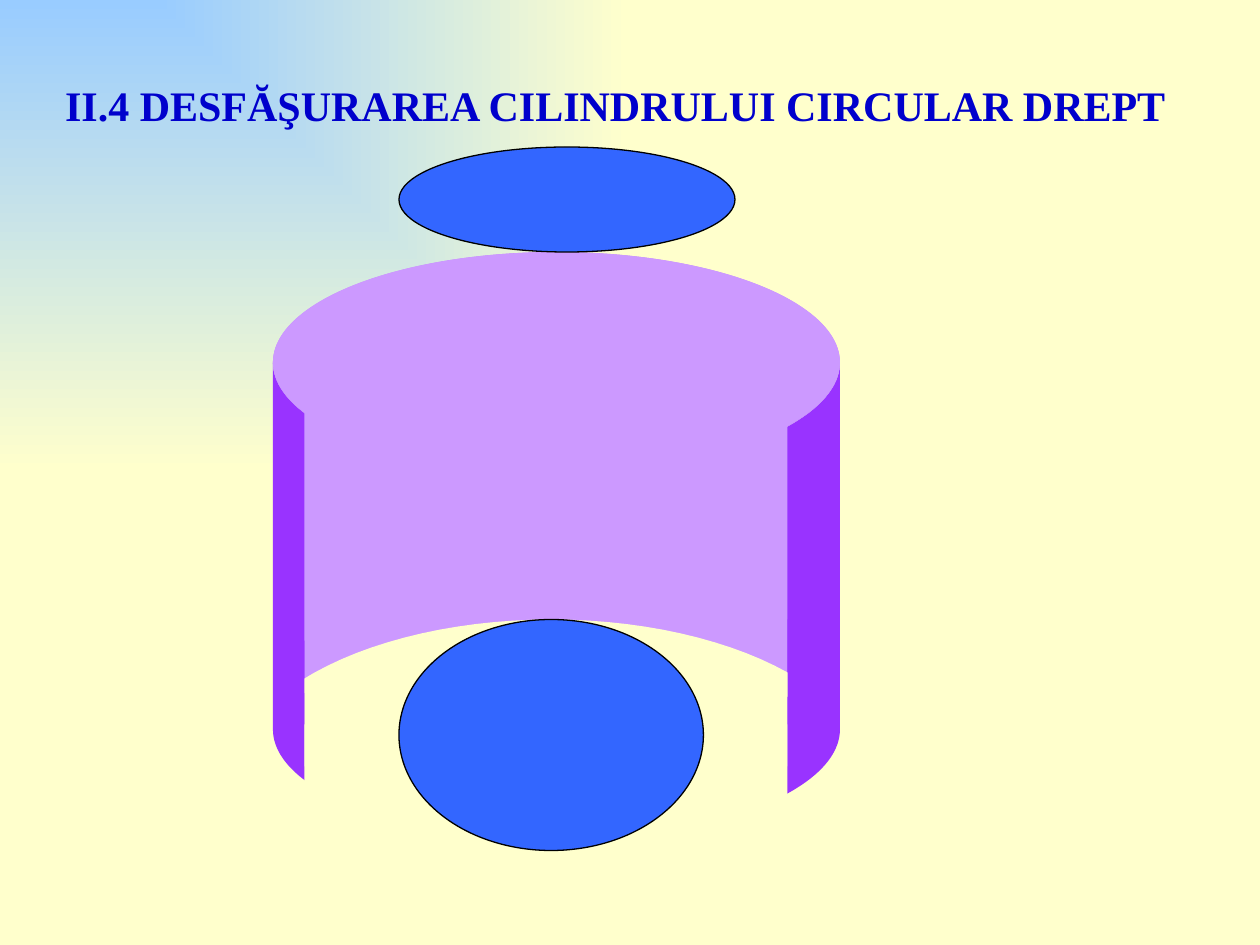
from dataclasses import dataclass
from math import atan2, cos, pi, radians, sin, tan

from lxml import etree
from pptx import Presentation
from pptx.dml.color import RGBColor
from pptx.enum.shapes import MSO_SHAPE
from pptx.enum.text import MSO_ANCHOR, MSO_AUTO_SIZE, PP_ALIGN
from pptx.oxml.ns import qn
from pptx.util import Pt

CAN, OVAL, RECT = MSO_SHAPE.CAN, MSO_SHAPE.OVAL, MSO_SHAPE.RECTANGLE
LEFT, TOP, FIXED = PP_ALIGN.LEFT, MSO_ANCHOR.TOP, MSO_AUTO_SIZE.NONE


@dataclass(frozen=True)
class Theme:
    sky: str = "99CCFF"
    cream: str = "FFFFCC"
    wall: str = "9933FF"
    inner: str = "CC99FF"
    base: str = "3366FF"
    edge: str = "000000"
    title: str = "0000CC"
    font: str = "Times New Roman"
    size: float = 24
    line: float = 0.75


THEME = Theme()


def rgb(code):
    return RGBColor.from_string(code)


def paint(shape, color, edge=None):
    shape.shadow.inherit = False
    shape.fill.solid()
    shape.fill.fore_color.rgb = rgb(color)
    if edge:
        shape.line.color.rgb = rgb(edge)
        shape.line.width = Pt(THEME.line)
    else:
        shape.line.fill.background()
    return shape


def add_part(slide, box, kind, place, color, edge=None):
    """Add a preset shape; place is relative to the box."""
    x, y, w, h = place
    shape = slide.shapes.add_shape(
        kind, Pt(box[0] + x), Pt(box[1] + y), Pt(w), Pt(h))
    return paint(shape, color, edge)


def add_poly(slide, box, points, color):
    """Add a closed outline; points are relative to the box."""
    spots = [(Pt(box[0] + x), Pt(box[1] + y)) for x, y in points]
    form = slide.shapes.build_freeform(*spots[0], scale=1.0)
    form.add_line_segments(spots[1:], close=True)
    return paint(form.convert_to_shape(), color)


def arch(place, thick, tilt, steps=32):
    """Points of a band along the top of an ellipse, open below the tilt."""
    x, y, w, h = place

    def curve(rx, ry):
        start = atan2(tan(radians(tilt)) * rx, ry)
        turns = [start + (pi - 2 * start) * i / steps for i in range(steps + 1)]
        return [(x + w / 2 - rx * cos(t), y + h / 2 - ry * sin(t)) for t in turns]

    outer = curve(w / 2, h / 2)
    inner = curve(w / 2 - thick, h / 2 - thick)
    return outer + inner[::-1]


def set_back(slide):
    """Fade from the top left corner."""
    fill = slide.background.fill
    fill.gradient()
    for stop, color in zip(fill.gradient_stops, (THEME.sky, THEME.cream)):
        stop.color.rgb = rgb(color)
    lin = slide.element.find(".//" + qn("a:lin"))
    fade = etree.Element(qn("a:path"), {"path": "rect"})
    etree.SubElement(fade, qn("a:fillToRect"), r="100000", b="100000")
    lin.getparent().replace(lin, fade)


def add_title(slide, box, text):
    title = slide.shapes.title
    title.left, title.top, title.width, title.height = map(Pt, box)
    frame = title.text_frame
    frame.text = text
    frame.word_wrap = True
    frame.auto_size = FIXED
    frame.vertical_anchor = TOP
    para = frame.paragraphs[0]
    para.alignment = LEFT
    font = para.font
    font.name, font.size, font.bold = THEME.font, Pt(THEME.size), True
    font.color.rgb = rgb(THEME.title)


def add_drum(slide, box):
    """Draw the cylinder opened at the front, with both bases apart."""
    # Body and upper base
    can = add_part(slide, box, CAN, (0, 60, 324, 336), THEME.wall)
    can.adjustments[0] = 0.39
    add_part(slide, box, OVAL, (0, 60, 324, 126), THEME.inner)
    add_part(slide, box, OVAL, (72, 0, 192, 60), THEME.base, THEME.edge)

    # Inside of the wall
    flap = [(234, 120.5), (264, 108), (264, 354), (246, 366), (246, 114)]
    pane = add_poly(slide, box, flap, THEME.inner)
    tint = pane.fill._xPr.find(".//" + qn("a:srgbClr"))
    etree.SubElement(tint, qn("a:alpha"), val="88000")
    add_part(slide, box, RECT, (18, 150, 276, 204), THEME.inner)

    # Opening below the curved rim
    add_poly(slide, box, arch((-24, 270, 366, 186), 33.3, 19.9), THEME.cream)
    add_part(slide, box, RECT, (18, 312, 276, 102), THEME.cream)

    # Lower base and side strips
    add_part(slide, box, OVAL, (72, 270, 174, 132), THEME.base, THEME.edge)
    for place in ((294, 270, 18, 60), (6, 282, 12, 48)):
        add_part(slide, box, RECT, place, THEME.wall)


def main():
    deck = Presentation()
    deck.slide_width, deck.slide_height = Pt(720), Pt(540)
    slide = deck.slides.add_slide(deck.slide_layouts[5])
    set_back(slide)
    add_drum(slide, (156, 84))
    add_title(slide, (30, 42, 672, 36),
              "II.4 DESFĂŞURAREA CILINDRULUI CIRCULAR DREPT")
    deck.save("out.pptx")


if __name__ == "__main__":
    main()
